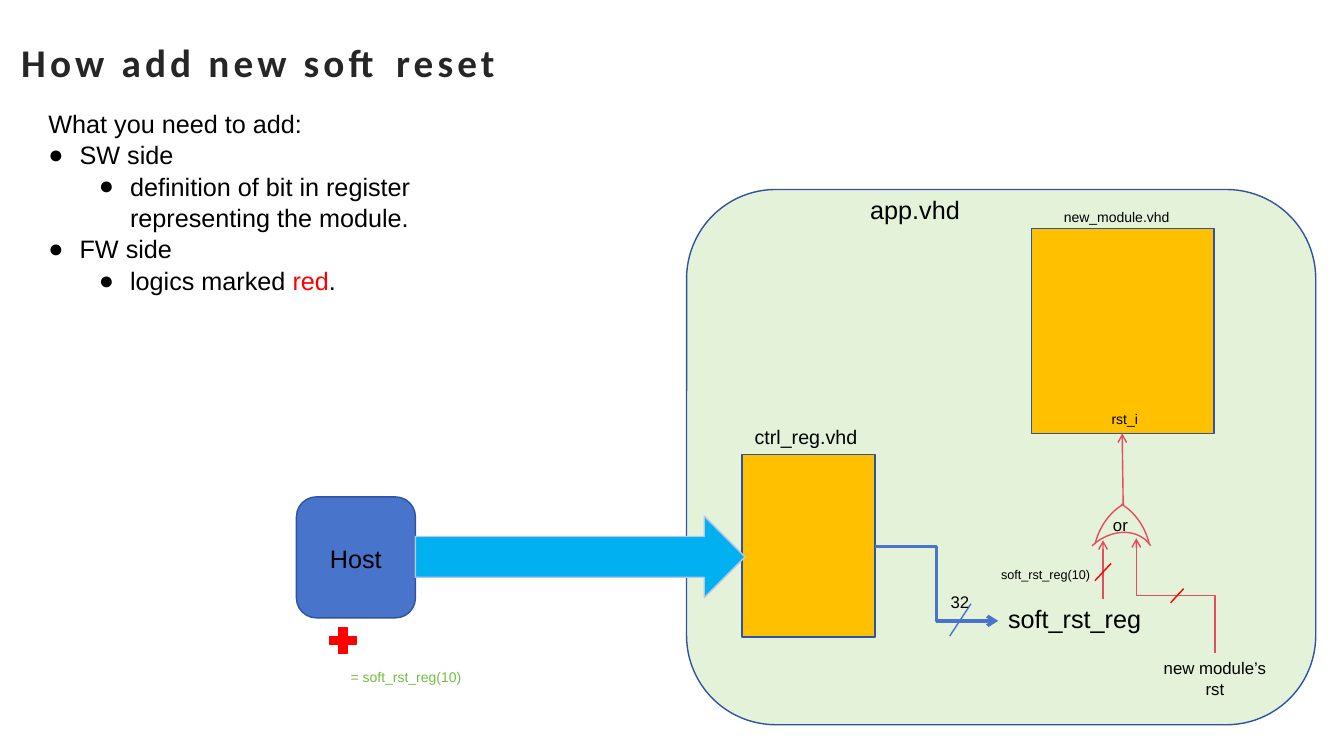
"""Build the slide on adding a new soft reset, with its block diagram."""
from pptx import Presentation
from pptx import util as u
from pptx.dml import color
from pptx.enum import shapes, text
from pptx.oxml import ns, xmlchemy

PX = 9144
COLORS = {
    "black": "000000", "title": "262626", "green_text": "75BD42", "red": "FF0000",
    "pale_green": "E3F2D9", "outline": "2E54A1", "orange": "FFC000", "blue": "4874CB",
    "sky": "00B0F0", "pale_blue": "B6C7EA", "rose": "E54C5E",
}
TITLE = ("How add new soft reset", (11, 22, 496, 79))
BODY_BOX = (38, 101, 507, 316)
BODY = [
    (None, [("What you need to add:", "black")]),
    (0, [("SW side", "black")]),
    (1, [("definition of bit in register representing the module.", "black")]),
    (0, [("FW side", "black")]),
    (1, [("logics marked ", "black"), ("red", "red"), (".", "black")]),
]
KIND = shapes.MSO_SHAPE
BLOCKS = [
    (KIND.ROUNDED_RECTANGLE, (681, 188, 624, 531), "pale_green", "outline"),
    (KIND.MATH_PLUS, (322, 618, 36, 35), "red", "red"),
    (KIND.RECTANGLE, (736, 451, 132, 181), "orange", "outline"),
    (KIND.ROUNDED_RECTANGLE, (294, 493, 118, 120), "blue", "outline"),
    (KIND.RIGHT_ARROW, (412, 512, 327, 81), "sky", "pale_blue"),
    (KIND.RECTANGLE, (1023, 227, 181, 203), "orange", "outline"),
]
GATE_ARCS = [
    ((1032, 493, 110, 128), (176.28, 205.32), 0, False),
    ((1084, 493, 112, 128), (176.28, 205.32), 0, True),
    ((1064, 532, 86, 70), (162, 3.72), 317, False),
]
LINE, ELBOW = shapes.MSO_CONNECTOR.STRAIGHT, shapes.MSO_CONNECTOR.ELBOW
WIRES = [
    (ELBOW, (868, 542, 990, 616), "blue", 2.5, True, 0),
    (LINE, (942, 631, 963, 599), "blue", 1, False, 0),
    (LINE, (1094, 594, 1094, 536), "rose", 1, True, 0),
    (LINE, (1086, 576, 1102, 559), "red", 1, False, 0),
    (ELBOW, (1109, 630, 1223, 552), "rose", 1, True, 270),
    (LINE, (1161, 598, 1174, 584), "red", 1, False, 0),
    (LINE, (1114, 500, 1113, 430), "rose", 1, True, 0),
]
LEFT, CENTER = text.PP_ALIGN.LEFT, text.PP_ALIGN.CENTER
LABELS = [
    ("= soft_rst_reg(10)", (338, 658, 220, 27), 10, LEFT, "green_text"),
    ("Host", (306, 534, 94, 40), 18, CENTER, "black"),
    ("app.vhd", (787, 188, 241, 40), 18, CENTER, "black"),
    ("ctrl_reg.vhd", (738, 417, 123, 41), 14, CENTER, "black"),
    ("soft_rst_reg", (990, 594, 153, 40), 18, LEFT, "black"),
    ("32", (932, 582, 40, 30), 12, CENTER, "black"),
    ("new module’s rst", (1142, 648, 126, 50), 12, CENTER, "black"),
    ("soft_rst_reg(10)", (983, 557, 111, 35), 9, LEFT, "black"),
    ("or", (1094, 506, 39, 30), 12, LEFT, "black"),
    ("rst_i", (1086, 402, 59, 27), 10, CENTER, "black"),
    ("new_module.vhd", (1041, 202, 133, 27), 10, CENTER, "black"),
]


def emu(lengths):
    return [length * PX for length in lengths]


def rgb(name):
    return color.RGBColor.from_string(COLORS[name])


def place(shape, box):
    shape.left, shape.top, shape.width, shape.height = emu(box)


def style_font(font, size, name, family="Arial"):
    font.size, font.name = u.Pt(size), family
    font.color.rgb = rgb(name)


def style_line(line, name, width=1):
    line.color.rgb = rgb(name)
    line.width = u.Pt(width)


def add_child(parent, tag, **attributes):
    child = xmlchemy.OxmlElement(tag)
    for key, value in attributes.items():
        child.set(key, value)
    parent.append(child)


def add_title(slide):
    wording, box = TITLE
    title = slide.shapes.title
    place(title, box)
    frame = title.text_frame
    frame.text = wording
    frame.auto_size = text.MSO_AUTO_SIZE.NONE
    frame.vertical_anchor = text.MSO_ANCHOR.MIDDLE
    paragraph = frame.paragraphs[0]
    paragraph.alignment = LEFT
    style_font(paragraph.font, 28, "title", "Calibri")
    paragraph.font.bold = True
    paragraph.runs[0]._r.get_or_add_rPr().set("spc", "300")


def add_body(slide):
    body = slide.placeholders[1]
    place(body, BODY_BOX)
    frame = body.text_frame
    frame.auto_size = text.MSO_AUTO_SIZE.NONE
    for index, (level, runs) in enumerate(BODY):
        paragraph = frame.add_paragraph() if index else frame.paragraphs[0]
        paragraph.level = level or 0
        paragraph.space_before = u.Pt(0)
        paragraph.line_spacing = 1.04
        properties = paragraph._p.get_or_add_pPr()
        bulleted = level is not None
        properties.set("marL", str((31 + 50 * level) * PX if bulleted else 0))
        properties.set("indent", str(-31 * PX if bulleted else 0))
        if bulleted:
            add_child(properties, "a:buChar", char="●")
        else:
            add_child(properties, "a:buNone")
        style_font(paragraph.font, 18, "black")
        for wording, name in runs:
            run = paragraph.add_run()
            run.text = wording
            if name != "black":
                run.font.color.rgb = rgb(name)


def add_shape(slide, kind, box, fill, outline):
    shape = slide.shapes.add_shape(kind, *emu(box))
    shape.shadow.inherit = False
    if fill:
        shape.fill.solid()
        shape.fill.fore_color.rgb = rgb(fill)
    else:
        shape.fill.background()
    style_line(shape.line, outline)
    return shape


def add_gate_arc(slide, box, angles, rotation, flipped):
    arc = add_shape(slide, KIND.ARC, box, None, "rose")
    arc.adjustments[0], arc.adjustments[1] = angles
    arc.rotation = rotation
    if flipped:
        arc._element.spPr.find(ns.qn("a:xfrm")).set("flipH", "1")


def add_wire(slide, kind, ends, name, width, arrow, rotation):
    wire = slide.shapes.add_connector(kind, *emu(ends))
    style_line(wire.line, name, width)
    properties = wire._element.spPr
    if arrow:
        add_child(properties.find(ns.qn("a:ln")), "a:tailEnd", type="arrow")
    if rotation:
        properties.find(ns.qn("a:xfrm")).set("rot", str(rotation * 60000))
    add_child(properties, "a:effectLst")


def add_label(slide, wording, box, size, alignment, name):
    frame = slide.shapes.add_textbox(*emu(box)).text_frame
    frame.word_wrap = True
    frame.text = wording
    paragraph = frame.paragraphs[0]
    paragraph.alignment = alignment
    style_font(paragraph.font, size, name)


def main():
    presentation = Presentation()
    presentation.slide_width, presentation.slide_height = emu((1333, 750))
    slide = presentation.slides.add_slide(presentation.slide_layouts[1])
    add_title(slide)
    add_body(slide)
    for add, items in ((add_shape, BLOCKS), (add_gate_arc, GATE_ARCS),
                       (add_wire, WIRES), (add_label, LABELS)):
        for item in items:
            add(slide, *item)
    presentation.save("out.pptx")


if __name__ == "__main__":
    main()
